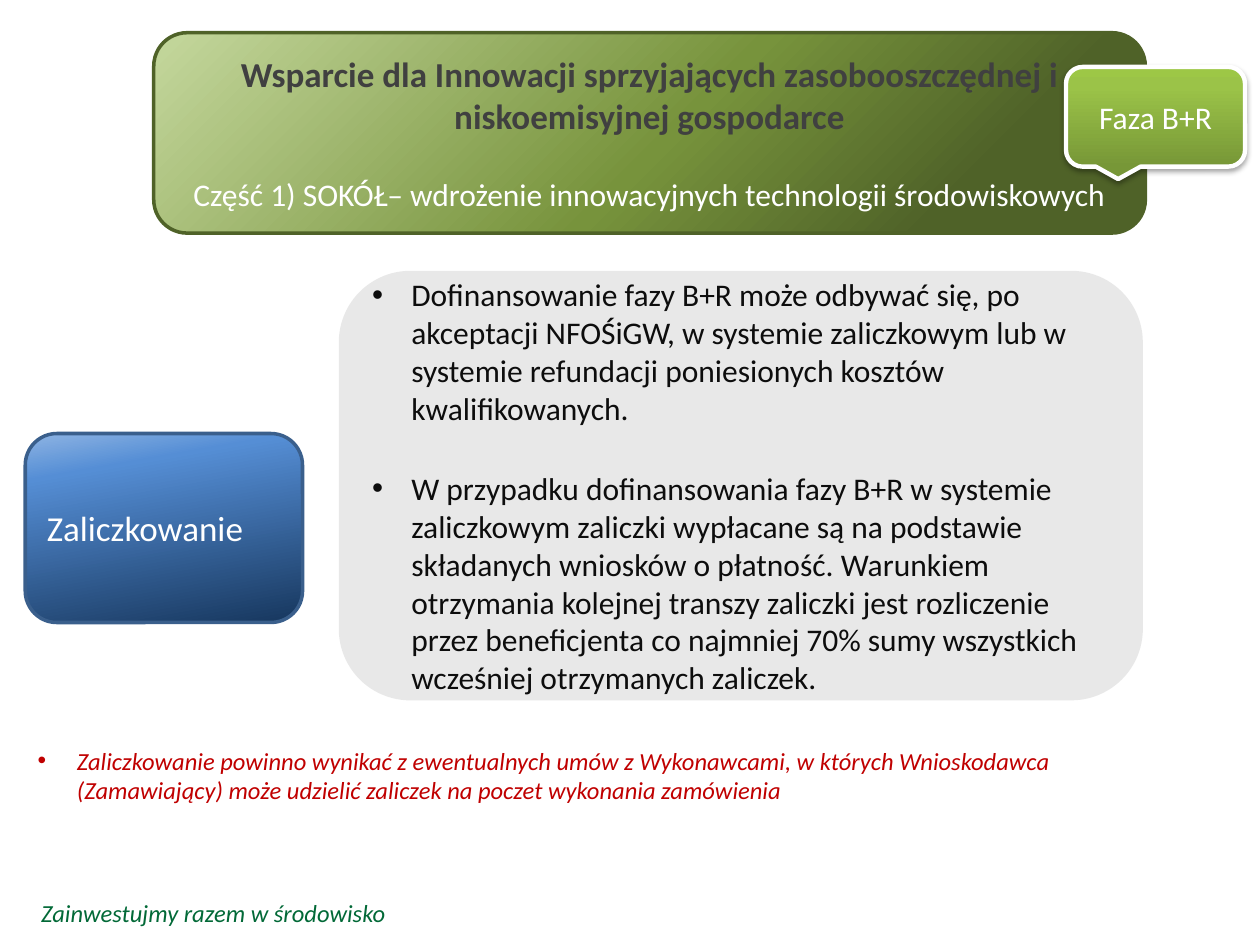
from copy import deepcopy

from lxml import etree
from pptx import Presentation, util as u
from pptx.dml import color
from pptx.enum import shapes, text
from pptx.oxml import ns

HUES = {
    "leaf": "4F6228", "moss": "77933C", "pale": "C3D69B",
    "navy": "17375E", "blue": "558ED5", "sky": "8EB4E3", "rim": "3A5F8C",
    "fern": "779737", "lime": "9BC348", "glow": "9DC746",
    "grey": "D9D9D9", "ink": "0D0D0D", "dim": "404040",
    "white": "FFFFFF", "black": "000000", "red": "C00000", "green": "026937",
}
KIND = shapes.MSO_SHAPE
LEFT, MID = text.PP_ALIGN.LEFT, text.PP_ALIGN.CENTER


def rgb(hue):
    return color.RGBColor.from_string(HUES[hue])


def sub(node, tag, **vals):
    return etree.SubElement(node, ns.qn(tag), {k: str(v) for k, v in vals.items()})


def write(frame, items, align=LEFT, bullet=False):
    frame.word_wrap = True
    for i, (words, hue, size, gap, style) in enumerate(items):
        par = frame.paragraphs[0] if i == 0 else frame.add_paragraph()
        par.alignment = align
        if bullet:
            props = par._p.get_or_add_pPr()
            props.set("marL", str(u.Cm(0.79)))
            props.set("indent", str(u.Cm(-0.79)))
            sub(props, "a:buFont", typeface="Arial")
            sub(props, "a:buChar", char="•")
        if gap:
            par.space_before = u.Pt(gap)
        run = par.add_run()
        run.text = words
        look = {"name": "Calibri", "size": u.Pt(size), **style}
        for key, val in look.items():
            setattr(run.font, key, val)
        run.font.color.rgb = rgb(hue)


def panel(slide, box, kind=KIND.ROUNDED_RECTANGLE, rim=None, width=2):
    shape = slide.shapes.add_shape(kind, *map(u.Cm, box))
    shape.shadow.inherit = False
    shape.text_frame.vertical_anchor = text.MSO_ANCHOR.MIDDLE
    if rim:
        shape.line.color.rgb = rgb(rim)
        shape.line.width = u.Pt(width)
    else:
        shape.line.fill.background()
    return shape


def blend(shape, angle, stops):
    shape.fill.gradient()
    shape.fill.gradient_angle = 360 - angle
    group = shape._element.spPr.find(".//" + ns.qn("a:gsLst"))
    model = deepcopy(group[0])
    for old in list(group):
        group.remove(old)
    for place, hue in stops:
        stop = deepcopy(model)
        stop.set("pos", str(place * 1000))
        for old in list(stop):
            stop.remove(old)
        sub(stop, "a:srgbClr", val=HUES[hue])
        group.append(stop)


def label(slide, box):
    shape = panel(slide, box, rim="rim")
    blend(shape, 260, [(0, "navy"), (80, "blue"), (100, "sky")])
    write(shape.text_frame, [("Zaliczkowanie", "white", 20, 0, {})])


def body(slide, box):
    shape = panel(slide, box)
    shape.fill.solid()
    shape.fill.fore_color.rgb = rgb("grey")
    tint = shape._element.spPr.find(ns.qn("a:solidFill"))[0]
    sub(tint, "a:alpha", val=59000)
    write(shape.text_frame, [
        ("Dofinansowanie fazy B+R może odbywać się, po akceptacji NFOŚiGW, "
         "w systemie zaliczkowym lub w systemie refundacji poniesionych "
         "kosztów kwalifikowanych.", "ink", 18, 0, {}),
        ("W przypadku dofinansowania fazy B+R w systemie zaliczkowym zaliczki "
         "wypłacane są na podstawie składanych wniosków o płatność. Warunkiem "
         "otrzymania kolejnej transzy zaliczki jest rozliczenie przez "
         "beneficjenta co najmniej 70% sumy wszystkich wcześniej otrzymanych "
         "zaliczek.", "ink", 18, 24.4, {}),
    ], bullet=True)


def header(slide, box):
    shape = panel(slide, box, rim="leaf")
    blend(shape, 225, [(19, "leaf"), (48, "moss"), (99, "pale")])
    write(shape.text_frame, [
        ("Wsparcie dla Innowacji sprzyjających zasobooszczędnej "
         "i niskoemisyjnej gospodarce", "dim", 20, 0, {"bold": True}),
        ("Część 1) SOKÓŁ– wdrożenie innowacyjnych technologii środowiskowych",
         "white", 18, 22, {}),
    ], MID)


def badge(slide, box):
    shape = panel(slide, box, KIND.ROUNDED_RECTANGULAR_CALLOUT, "white", 2.5)
    blend(shape, 270, [(0, "fern"), (80, "lime"), (100, "glow")])
    glow = shape._element.spPr.find(ns.qn("a:effectLst"))
    shade = sub(glow, "a:outerShdw", blurRad=u.Pt(3.1), dist=u.Pt(1.8),
                dir=5400000, rotWithShape=0)
    tint = sub(shade, "a:srgbClr", val=HUES["black"])
    sub(tint, "a:alpha", val=35000)
    write(shape.text_frame, [("Faza B+R", "white", 18, 0, {})], MID)


def note(slide, box, words, hue, bullet=False):
    frame = slide.shapes.add_textbox(*map(u.Cm, box)).text_frame
    write(frame, [(words, hue, 14, 0, {"italic": True})], bullet=bullet)


def main():
    deck = Presentation()
    deck.slide_width, deck.slide_height = u.Cm(25.4), u.Cm(19.05)
    slide = deck.slides.add_slide(deck.slide_layouts[6])
    note(slide, (0.58, 17.98, 10.72, 0.86),
         "Zainwestujmy razem w środowisko", "green")
    label(slide, (0.51, 8.74, 5.59, 3.81))
    body(slide, (6.83, 5.46, 16.21, 8.66))
    header(slide, (3.1, 0.66, 19.99, 4.04))
    badge(slide, (21.49, 1.35, 3.61, 2.01))
    note(slide, (0.51, 14.91, 23.8, 1.45),
         "Zaliczkowanie powinno wynikać z ewentualnych umów z Wykonawcami, "
         "w których Wnioskodawca (Zamawiający) może udzielić zaliczek na "
         "poczet wykonania zamówienia", "red", True)
    deck.save("out.pptx")


if __name__ == "__main__":
    main()
